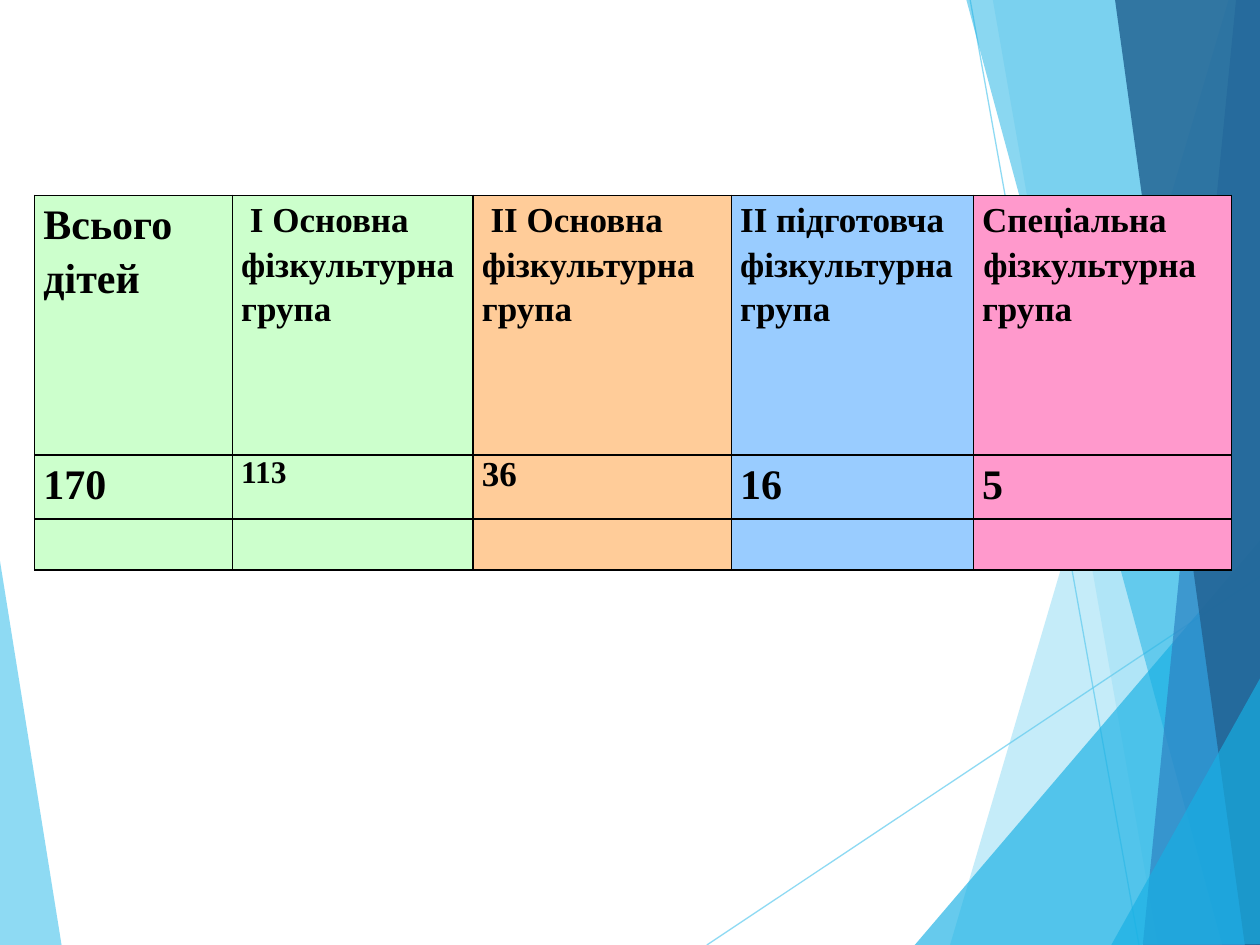
from dataclasses import dataclass

import pptx
import pptx.dml.color
import pptx.enum.shapes
import pptx.enum.text
import pptx.oxml.ns
import pptx.util
from lxml import etree

SLIDE_W = pptx.util.Inches(10)
SLIDE_H = pptx.util.Inches(7.5)
FONT = "Times New Roman"
SKY, CYAN, BLUE, NAVY = "5FCBEF", "17B0E4", "2E83C3", "226292"
GREEN, ORANGE, LIGHT_BLUE, PINK = "CCFFCC", "FFCC99", "99CCFF", "FF99CC"

Point = tuple[float, float]  # percent of slide width, percent of slide height


@dataclass
class Facet:
    color: str
    opacity: int
    corners: list[Point]


@dataclass
class Ray:
    start: Point
    end: Point


@dataclass
class Group:
    width: float  # percent of slide width
    color: str
    heading: list[str]
    heading_size: int
    count: str
    count_size: int
    count_justified: bool = True


LEFT_FACET = Facet(SKY, 70, [(-0.1, 58.53), (4.9, 100.1), (-0.1, 100)])
RAYS = [Ray((56.1, 100), (100.1, 60.93)), Ray((77, 0), (90.4, 100))]
RIGHT_FACETS = [
    Facet(SKY, 36, [(97.5, 0), (75.4, 100), (100.2, 100.1), (100.1, 0)]),
    Facet(SKY, 20, [(78.8, 0), (91.9, 100), (100.1, 100), (100.1, 0)]),
    Facet(CYAN, 66, [(72.6, 100), (100, 57.2), (100.1, 100)]),
    Facet(CYAN, 50, [(76.7, 0), (97, 100), (100.1, 100), (100.1, 0)]),
    Facet(BLUE, 70, [(98.1, 0), (90.7, 100), (100.1, 100), (100, 0)]),
    Facet(NAVY, 82, [(88.5, 0), (98.8, 100), (100.2, 100), (100, 0)]),
    Facet(CYAN, 66, [(88.2, 100), (100.2, 71.33), (100.2, 99.9)]),
]

GROUPS = [
    Group(15.7, GREEN, ["Всього дітей"], 24, "170", 24),
    Group(19.1, GREEN, [" І Основна", "фізкультурна", "група"], 20, "113", 18, False),
    Group(20.5, ORANGE, [" ІІ Основна", "фізкультурна", "група"], 20, "36", 20, False),
    Group(19.2, LIGHT_BLUE, ["ІІ підготовча", "фізкультурна", "група"], 20, "16", 24),
    Group(20.5, PINK, ["Спеціальна", "фізкультурна", "група"], 20, "5", 24),
]
ROW_HEIGHTS = [27.47, 6.8, 5.4]  # percent of slide height
TABLE_CORNER: Point = (2.75, 20.67)


def rgb(color: str) -> pptx.dml.color.RGBColor:
    return pptx.dml.color.RGBColor.from_string(color)


def across(percent: float) -> int:
    return round(SLIDE_W * percent / 100)


def down(percent: float) -> int:
    return round(SLIDE_H * percent / 100)


def place(point: Point) -> tuple[int, int]:
    return across(point[0]), down(point[1])


def set_opacity(shape, percent: int) -> None:
    for color in shape.element.spPr.iter(pptx.oxml.ns.qn("a:srgbClr")):
        etree.SubElement(color, pptx.oxml.ns.qn("a:alpha"), val=str(percent * 1000))


def draw_facet(slide, facet: Facet) -> None:
    first, *rest = [place(corner) for corner in facet.corners]
    builder = slide.shapes.build_freeform(*first, scale=1.0)
    builder.add_line_segments(rest, close=True)
    shape = builder.convert_to_shape()
    shape.shadow.inherit = False
    shape.fill.solid()
    shape.fill.fore_color.rgb = rgb(facet.color)
    set_opacity(shape, facet.opacity)
    shape.line.fill.background()


def draw_ray(slide, ray: Ray) -> None:
    line = slide.shapes.add_connector(
        pptx.enum.shapes.MSO_CONNECTOR.STRAIGHT, *place(ray.start), *place(ray.end)
    )
    line.line.color.rgb = rgb(SKY)
    line.line.width = pptx.util.Pt(0.75)
    set_opacity(line, 70)
    etree.SubElement(line.element.spPr, pptx.oxml.ns.qn("a:effectLst"))


def style_cell(cell, color: str) -> None:
    cell.margin_left = cell.margin_right = pptx.util.Inches(0.07)
    cell.margin_top = cell.margin_bottom = 0
    # Borders come before the fill in the cell properties
    properties = cell._tc.get_or_add_tcPr()
    for side in ("a:lnL", "a:lnR", "a:lnT", "a:lnB"):
        border = etree.SubElement(
            properties, pptx.oxml.ns.qn(side), w=str(pptx.util.Pt(1))
        )
        paint = etree.SubElement(border, pptx.oxml.ns.qn("a:solidFill"))
        etree.SubElement(paint, pptx.oxml.ns.qn("a:srgbClr"), val="000000")
    cell.fill.solid()
    cell.fill.fore_color.rgb = rgb(color)


def write_cell(cell, lines: list[str], size: int, justified: bool = True) -> None:
    frame = cell.text_frame
    for index, text in enumerate(lines):
        paragraph = frame.paragraphs[0] if index == 0 else frame.add_paragraph()
        if justified:
            paragraph.alignment = pptx.enum.text.PP_ALIGN.JUSTIFY
            paragraph.line_spacing = 1.15
        run = paragraph.add_run()
        run.text = text
        run.font.name = FONT
        run.font.size = pptx.util.Pt(size)
        run.font.bold = True
        run.font.color.rgb = rgb("000000")


def draw_table(slide, groups: list[Group]) -> None:
    table = slide.shapes.add_table(
        len(ROW_HEIGHTS),
        len(groups),
        *place(TABLE_CORNER),
        across(sum(group.width for group in groups)),
        down(sum(ROW_HEIGHTS)),
    ).table
    table.first_row = table.horz_banding = False
    for row, height in zip(table.rows, ROW_HEIGHTS):
        row.height = down(height)
    for column, group in enumerate(groups):
        table.columns[column].width = across(group.width)
        for row in range(len(ROW_HEIGHTS)):
            style_cell(table.cell(row, column), group.color)
        write_cell(table.cell(0, column), group.heading, group.heading_size)
        write_cell(
            table.cell(1, column), [group.count], group.count_size, group.count_justified
        )
    # The last heading has a slight indent on its second line
    special = table.cell(0, len(groups) - 1).text_frame.paragraphs[1]
    special._p.get_or_add_pPr().set("indent", str(pptx.util.Inches(0.01)))


def main() -> None:
    deck = pptx.Presentation()
    deck.slide_width, deck.slide_height = SLIDE_W, SLIDE_H
    slide = deck.slides.add_slide(deck.slide_layouts[6])

    # Background facets and rays
    draw_facet(slide, LEFT_FACET)
    for ray in RAYS:
        draw_ray(slide, ray)
    for facet in RIGHT_FACETS:
        draw_facet(slide, facet)

    # Children by physical education group
    draw_table(slide, GROUPS)
    deck.save("out.pptx")


if __name__ == "__main__":
    main()
